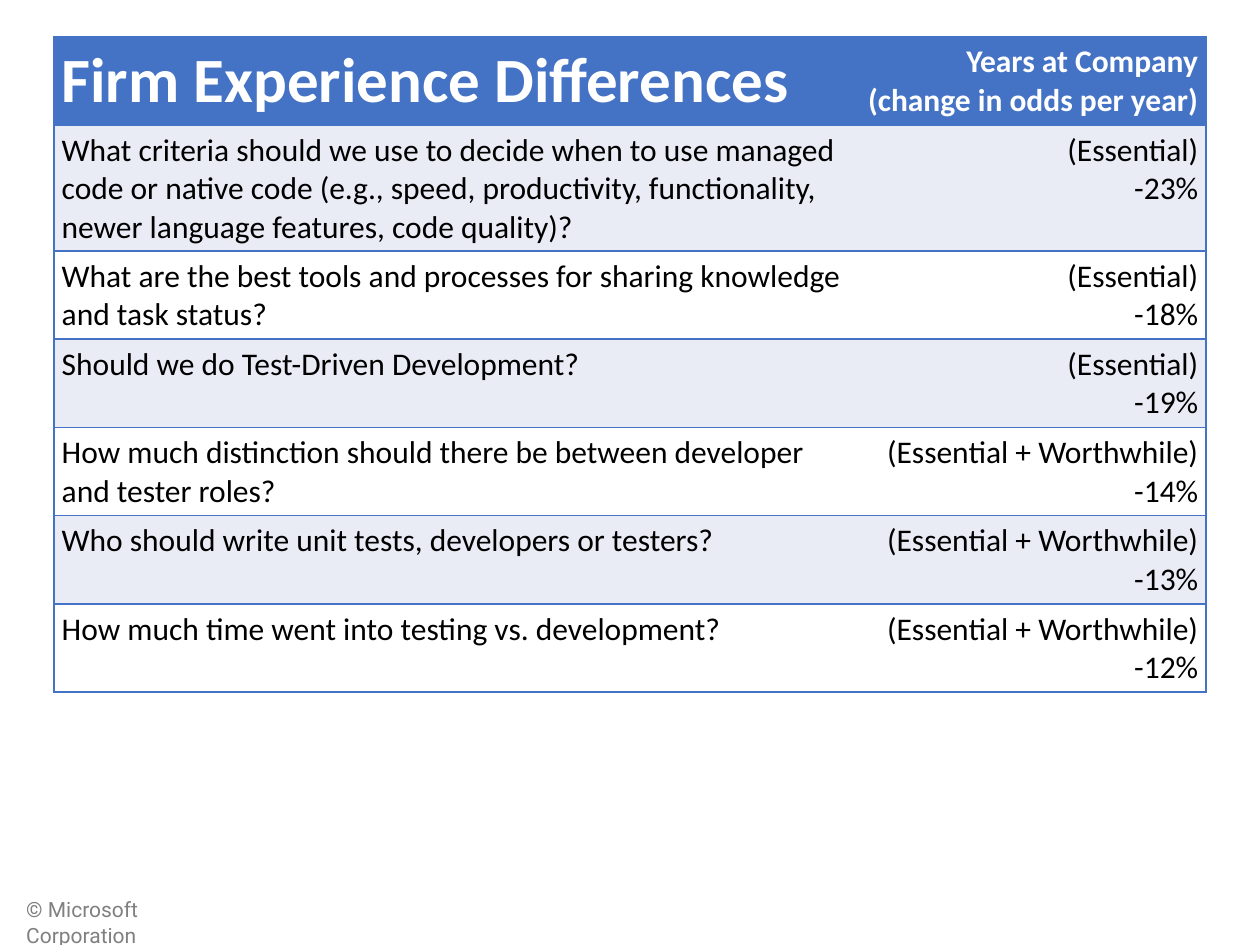
from lxml import etree
from pptx import Presentation
from pptx.dml.color import RGBColor
from pptx.enum import text
from pptx.oxml import ns
from pptx.util import Inches, Pt

COLORS = {"blue": "4472C4", "band": "E9EBF5", "white": "FFFFFF",
          "black": "000000", "gray": "808080"}
NO_STYLE = "{2D5ABB26-0587-4C30-8999-92F81FD0307C}"
ESSENTIAL = "(Essential)"
WORTHWHILE = "(Essential + Worthwhile)"

questions = [
    ("What criteria should we use to decide when to use managed code or native code "
     "(e.g., speed, productivity, functionality, newer language features, code quality)?",
     ESSENTIAL, "-23%"),
    ("What are the best tools and processes for sharing knowledge and task status?",
     ESSENTIAL, "-18%"),
    ("Should we do Test-Driven Development?", ESSENTIAL, "-19%"),
    ("How much distinction should there be between developer and tester roles?",
     WORTHWHILE, "-14%"),
    ("Who should write unit tests, developers or testers?", WORTHWHILE, "-13%"),
    ("How much time went into testing vs. development?", WORTHWHILE, "-12%"),
]


def write(frame, words, size=18, color="black", bold=False, font="Calibri",
          align=text.PP_ALIGN.LEFT):
    paragraph = frame.paragraphs[0]
    paragraph.text = words
    paragraph.alignment = align
    for run in paragraph.runs:
        run.font.size = Pt(size)
        run.font.bold = bold
        run.font.name = font
        run.font.color.rgb = RGBColor.from_string(COLORS[color])


def add_borders(cell, sides):
    """Draw a 1 pt blue line on each side named in sides (L, R, T, B)."""
    properties = cell._tc.get_or_add_tcPr()
    for side in sides:
        line = etree.SubElement(properties, ns.qn(f"a:ln{side}"), w=str(Pt(1)))
        fill = etree.SubElement(line, ns.qn("a:solidFill"))
        etree.SubElement(fill, ns.qn("a:srgbClr"), val=COLORS["blue"])


deck = Presentation()
deck.slide_width, deck.slide_height = Inches(10), Inches(7.5)
slide = deck.slides.add_slide(deck.slide_layouts[6])

copyright_box = slide.shapes.add_textbox(Inches(0.11), Inches(7.07), Inches(1.98), Inches(0.3))
copyright_box.text_frame.word_wrap = True
write(copyright_box.text_frame, "© Microsoft Corporation", size=12, color="gray", font="Roboto")

table = slide.shapes.add_table(len(questions) + 1, 2, Inches(0.43), Inches(0.29),
                               Inches(9.14), Inches(5.2)).table
table.horz_banding = False
table._tbl.tblPr.find(ns.qn("a:tableStyleId")).text = NO_STYLE
table.columns[0].width, table.columns[1].width = Inches(6.38), Inches(2.76)
for row in table.rows:
    row.height = Inches(0.7)
table.rows[1].height = Inches(1)

header = ("Firm Experience Differences", "Years at Company\n(change in odds per year)")
rows = [header] + [(question, f"{rating}\n{change}") for question, rating, change in questions]
for r, row in enumerate(rows):
    is_header = r == 0
    background = "blue" if is_header else "band" if r % 2 else "white"
    for c, words in enumerate(row):
        cell = table.cell(r, c)
        cell.margin_left = cell.margin_right = Inches(0.06)
        cell.margin_top = cell.margin_bottom = Inches(0.05)
        cell.vertical_anchor = text.MSO_ANCHOR.BOTTOM if is_header else text.MSO_ANCHOR.TOP
        add_borders(cell, "RTB" if c else "LTB")
        cell.fill.solid()
        cell.fill.fore_color.rgb = RGBColor.from_string(COLORS[background])
        write(cell.text_frame, words, size=36 if is_header and c == 0 else 18,
              color="white" if is_header else "black", bold=is_header,
              align=text.PP_ALIGN.RIGHT if c else text.PP_ALIGN.LEFT)

deck.save("out.pptx")
